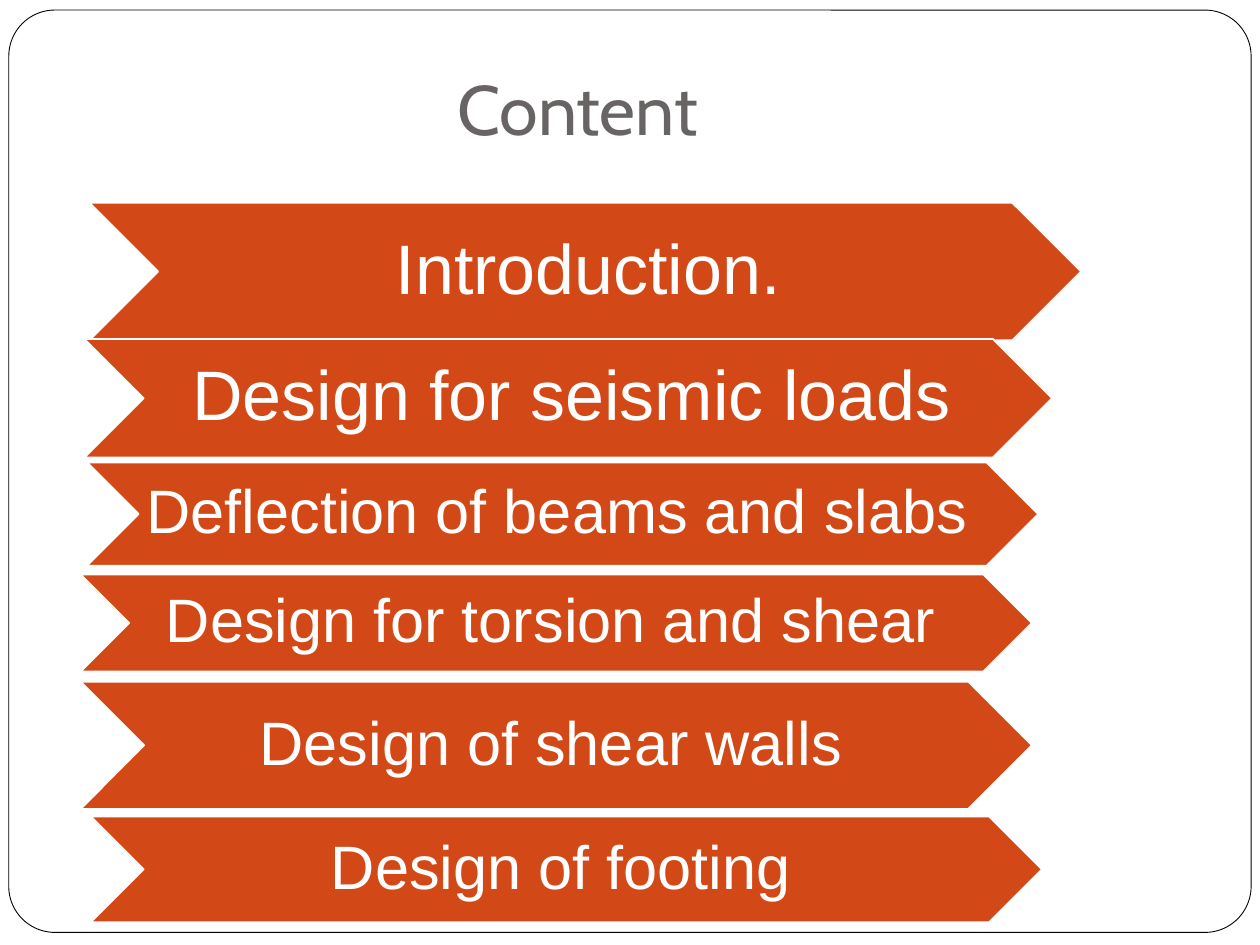
from dataclasses import dataclass

from pptx import Presentation
from pptx.dml.color import RGBColor
from pptx.enum import shapes, text
from pptx.util import Inches, Pt


@dataclass(frozen=True)
class Theme:
    white: RGBColor = RGBColor.from_string("FFFFFF")
    black: RGBColor = RGBColor.from_string("000000")
    grey: RGBColor = RGBColor.from_string("696464")
    rust: RGBColor = RGBColor.from_string("D34817")
    head: str = "Cabin"
    body: str = "Arial"
    large: int = 40
    small: int = 35


theme = Theme()
deck = Presentation()
deck.slide_width, deck.slide_height = Inches(10), Inches(7.5)
slide = deck.slides.add_slide(deck.slide_layouts[6])


def draw(kind, box, fill, line, width):
    shape = slide.shapes.add_shape(kind, *map(Inches, box))
    shape.shadow.inherit = False
    shape.fill.solid()
    shape.fill.fore_color.rgb = fill
    shape.line.color.rgb = line
    shape.line.width = Pt(width)
    return shape


def write(shape, words, face, size, color, anchor, pads):
    frame = shape.text_frame
    frame.vertical_anchor = anchor
    (frame.margin_left, frame.margin_top,
     frame.margin_right, frame.margin_bottom) = map(Inches, pads)
    line = frame.paragraphs[0]
    line.text = words
    line.alignment = text.PP_ALIGN.CENTER
    line.font.name = face
    line.font.size = Pt(size)
    line.font.color.rgb = color
    return frame


border = draw(shapes.MSO_SHAPE.ROUNDED_RECTANGLE, (0.07, 0.08, 9.86, 7.32),
              theme.white, theme.black, 0.5)
border.adjustments[0] = 0.05

title = slide.shapes.add_textbox(*map(Inches, (0.5, 0.04, 8.17, 1.25)))
frame = write(title, "Content", theme.head, theme.large, theme.grey,
              text.MSO_ANCHOR.BOTTOM, (0.1, 0.05, 0.1, 0.1))
frame.word_wrap = True

topics = [
    ("Introduction.", theme.large, (0.71, 1.61, 7.87, 1.09)),
    ("Design for seismic loads", theme.large, (0.67, 2.69, 7.68, 0.94)),
    ("Deflection of beams and slabs ", theme.small, (0.69, 3.67, 7.55, 0.82)),
    ("Design for torsion and shear ", theme.small, (0.64, 4.56, 7.55, 0.77)),
    ("Design of shear walls ", theme.small, (0.64, 5.41, 7.55, 1.01)),
    ("Design of footing ", theme.small, (0.72, 6.48, 7.55, 0.84)),
]
for words, size, box in topics:
    arrow = draw(shapes.MSO_SHAPE.CHEVRON, box, theme.rust, theme.white, 1)
    frame = write(arrow, words, theme.body, size, theme.white,
                  text.MSO_ANCHOR.MIDDLE, (0.05, 0.02, 0, 0.02))
    frame.word_wrap = False
    frame.paragraphs[0].line_spacing = 0.9

deck.save("out.pptx")
